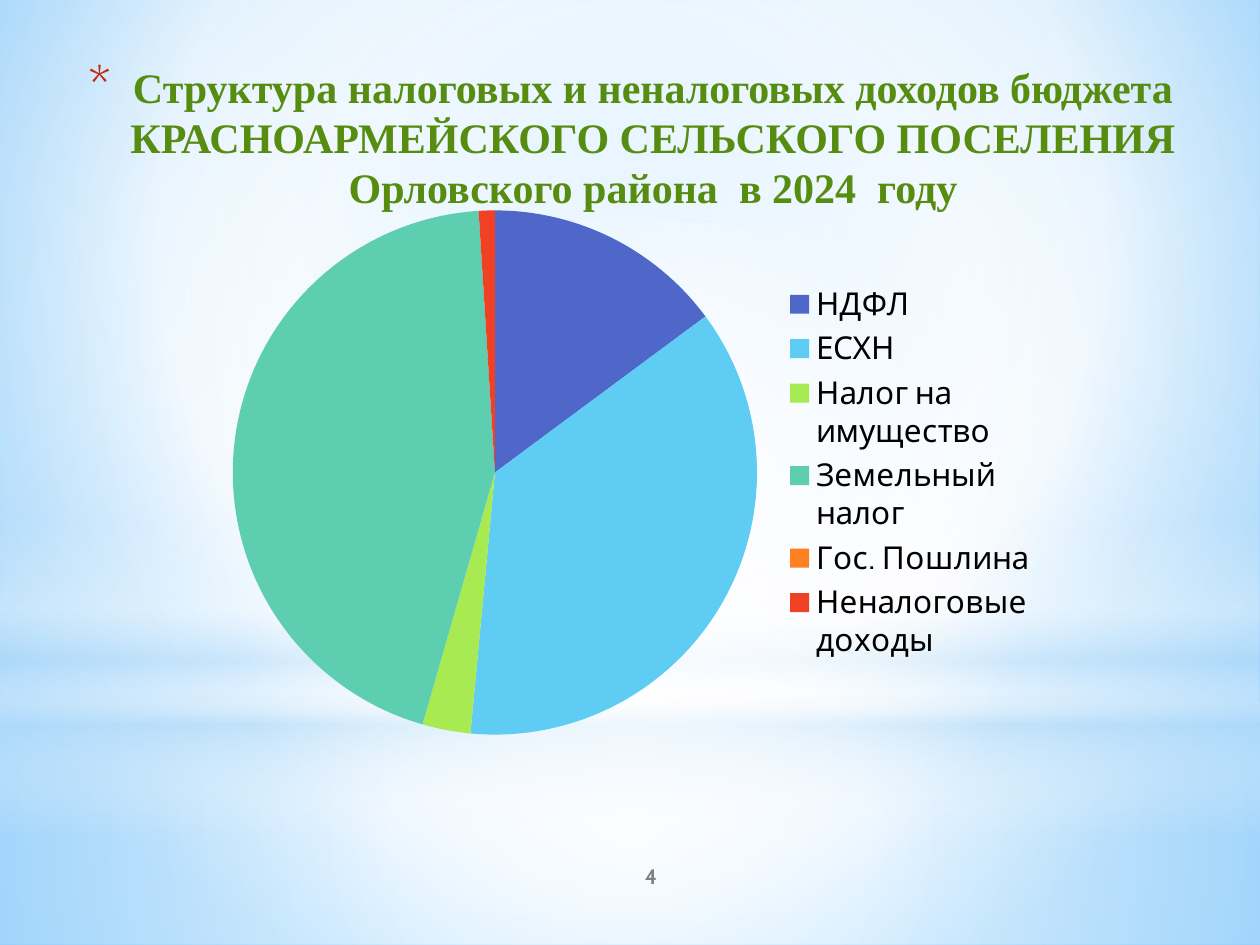
from dataclasses import dataclass
from typing import Optional

from lxml.etree import SubElement
from pptx import Presentation
from pptx.chart.data import CategoryChartData
from pptx.dml.color import RGBColor
from pptx.enum.chart import XL_CHART_TYPE as ChartType, XL_LEGEND_POSITION as LegendPosition
from pptx.enum.shapes import MSO_SHAPE as Preset
from pptx.enum.text import MSO_ANCHOR as Anchor, PP_ALIGN as Align
from pptx.oxml.ns import qn
from pptx.util import Pt

PX = 914400 / 126  # EMU in one px


@dataclass(frozen=True)
class Box:
    left: int
    top: int
    width: int
    height: int

    def emu(self) -> tuple[int, ...]:
        return tuple(round(v * PX) for v in (self.left, self.top, self.width, self.height))


@dataclass(frozen=True)
class Gradient:
    """Stops are (position %, colour, opacity %); without an angle it is circular."""
    stops: tuple[tuple[int, str, int], ...]
    focus: tuple[int, int, int, int] = (50, 50, 50, 50)
    angle: Optional[int] = None


@dataclass(frozen=True)
class Glow:
    preset: Preset
    box: Box
    gradient: Gradient


@dataclass(frozen=True)
class Slice:
    name: str
    value: int
    color: str


BACKGROUND = Gradient(((0, "9ED5FF", 100), (60, "FFFFFF", 100), (100, "5BB9FF", 100)),
                      focus=(20, 10, 20, 60))
GLOWS = (
    Glow(Preset.RECTANGLE, Box(0, 703, 1260, 242),
         Gradient(((0, "FFFFFF", 91), (37, "FFFFFF", 76), (100, "B4DCFA", 79)))),
    Glow(Preset.RECTANGLE, Box(0, 0, 1260, 703),
         Gradient(((0, "FFFFFF", 89), (48, "FFFFFF", 62), (100, "B4DCFA", 79)))),
    Glow(Preset.RECTANGLE, Box(0, 519, 1260, 315),
         Gradient(((0, "FFFFFF", 0), (29, "FFFFFF", 30), (45, "B4DCFA", 40),
                   (55, "FFFFFF", 26), (65, "B4DCFA", 60), (100, "FFFFFF", 0)), angle=90)),
    Glow(Preset.OVAL, Box(0, 220, 1260, 703),
         Gradient(((0, "FFFFFF", 100), (56, "FFFFFF", 0)))),
)
SLICES = (
    Slice("НДФЛ", 15, "4E67C8"),
    Slice("ЕСХН", 37, "5ECCF3"),
    Slice("Налог на имущество", 3, "A7EA52"),
    Slice("Земельный налог", 45, "5DCEAF"),
    Slice("Гос. Пошлина", 0, "FF8021"),
    Slice("Неналоговые доходы", 1, "F14124"),
)
TITLE = ("Структура налоговых и неналоговых доходов бюджета "
         "КРАСНОАРМЕЙСКОГО СЕЛЬСКОГО ПОСЕЛЕНИЯ\nОрловского района  в 2024  году")


def rgb(color: str) -> RGBColor:
    return RGBColor.from_string(color)


def set_gradient(fill, owner, gradient: Gradient) -> None:
    """Give the fill of the owner element the stops and direction of the gradient."""
    fill.gradient()
    element = owner.find(".//" + qn("a:gradFill"))
    for child in list(element):
        element.remove(child)
    stop_list = SubElement(element, qn("a:gsLst"))
    for position, color, opacity in gradient.stops:
        stop = SubElement(stop_list, qn("a:gs"), pos=str(position * 1000))
        color_element = SubElement(stop, qn("a:srgbClr"), val=color)
        if opacity < 100:
            SubElement(color_element, qn("a:alpha"), val=str(opacity * 1000))
    if gradient.angle is not None:
        SubElement(element, qn("a:lin"), ang=str(gradient.angle * 60000), scaled="0")
    else:
        circle = SubElement(element, qn("a:path"), path="circle")
        sides = {side: str(value * 1000) for side, value in zip("ltrb", gradient.focus)}
        SubElement(circle, qn("a:fillToRect"), **sides)


def add_glow(slide, glow: Glow) -> None:
    shape = slide.shapes.add_shape(glow.preset, *glow.box.emu())
    shape.shadow.inherit = False
    shape.line.fill.background()
    set_gradient(shape.fill, shape._element.spPr, glow.gradient)


def set_font(font, name: str, size: int, color: str, bold: bool = False) -> None:
    font.name, font.size, font.bold = name, Pt(size), bold
    font.color.rgb = rgb(color)


def add_text(slide, box: Box, text: str, anchor: Anchor):
    """Add a centred text box and return its paragraph."""
    frame = slide.shapes.add_textbox(*box.emu()).text_frame
    frame.word_wrap = True
    frame.vertical_anchor = anchor
    paragraph = frame.paragraphs[0]
    paragraph.text = text
    paragraph.alignment = Align.CENTER
    return paragraph


def add_bullet(paragraph, char: str, color: str, percent: int, indent: int) -> None:
    properties = paragraph._p.get_or_add_pPr()
    properties.set("marL", str(round(indent * PX)))
    properties.set("indent", str(-round(indent * PX)))
    bullet_color = SubElement(properties, qn("a:buClr"))
    SubElement(bullet_color, qn("a:srgbClr"), val=color)
    SubElement(properties, qn("a:buSzPct"), val=str(percent * 1000))
    SubElement(properties, qn("a:buFont"), typeface="Cabin")
    SubElement(properties, qn("a:buChar"), char=char)


def add_pie(slide, box: Box, slices: tuple[Slice, ...]) -> None:
    data = CategoryChartData()
    data.categories = [part.name for part in slices]
    data.add_series("Series 1", [part.value for part in slices])
    chart = slide.shapes.add_chart(ChartType.PIE, *box.emu(), data).chart
    set_font(chart.font, "Cabin", 18, "000000")
    chart.has_title = False
    chart.has_legend = True
    chart.legend.position = LegendPosition.RIGHT
    chart.legend.include_in_layout = False
    plot = chart.plots[0]
    plot.vary_by_categories = True
    for index, part in enumerate(slices):
        fill = plot.series[0].points[index].format.fill
        fill.solid()
        fill.fore_color.rgb = rgb(part.color)


def main() -> None:
    presentation = Presentation()
    presentation.slide_width, presentation.slide_height = Box(0, 0, 1260, 945).emu()[2:]
    slide = presentation.slides.add_slide(presentation.slide_layouts[6])

    # Sky background and soft light
    set_gradient(slide.background.fill, slide._element, BACKGROUND)
    for glow in GLOWS:
        add_glow(slide, glow)

    # Title with its asterisk bullet
    title = add_text(slide, Box(64, 55, 1134, 228), TITLE, Anchor.TOP)
    add_bullet(title, "*", "C3260C", 128, 44)
    set_font(title.font, "Times New Roman", 24, "568D11", bold=True)

    # Slide number
    number = add_text(slide, Box(525, 851, 252, 50), "4", Anchor.MIDDLE)
    set_font(number.font, "Cabin", 12, "808080", bold=True)

    # Revenue structure
    add_pie(slide, Box(210, 193, 840, 559), SLICES)

    presentation.save("out.pptx")


if __name__ == "__main__":
    main()
